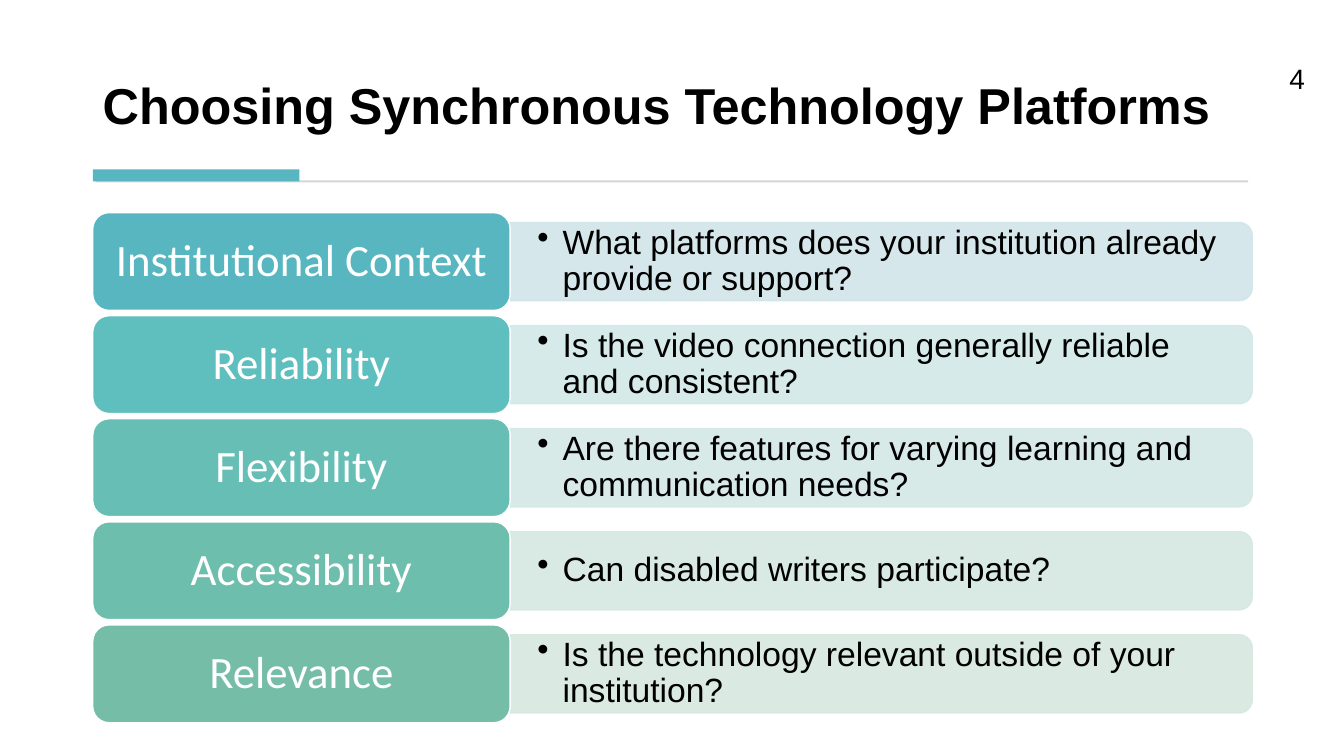
from lxml import etree
from pptx import Presentation, util as u
from pptx.dml.color import RGBColor
from pptx.enum import shapes, text
from pptx.oxml.ns import qn

COLORS = {"ink": "000000", "paper": "FFFFFF", "rule": "D5D5D5", "accent": "58B6C0"}
# Label, question, label colour, panel colour
CRITERIA = [
    ("Institutional Context", "What platforms does your institution already provide or support?",
     "58B6C0", "D1E5E8"),
    ("Reliability", "Is the video connection generally reliable and consistent?",
     "5FBFBF", "D2E8E8"),
    ("Flexibility", "Are there features for varying learning and communication needs?",
     "67BEB5", "D4E8E6"),
    ("Accessibility", "Can disabled writers participate?", "6EBEAD", "D5E8E3"),
    ("Relevance", "Is the technology relevant outside of your institution?",
     "75BDA7", "D6E8E1"),
]


def add_block(s, kind, box, fill, line=None):
    sp = s.shapes.add_shape(kind, *map(u.Inches, box))
    sp.shadow.inherit = False
    sp.fill.solid()
    sp.fill.fore_color.rgb = RGBColor.from_string(fill)
    if line:
        sp.line.color.rgb = RGBColor.from_string(line)
        sp.line.width = u.Pt(1)
    else:
        sp.line.fill.background()
    return sp


def add_box(s, box):
    return s.shapes.add_textbox(*map(u.Inches, box))


def write(sp, words, size, font="Arial", color=COLORS["ink"], bold=False,
          align=text.PP_ALIGN.LEFT, anchor=text.MSO_ANCHOR.MIDDLE,
          inset=(0.1, 0.05), spacing=0.9):
    tf = sp.text_frame
    tf.word_wrap = True
    tf.vertical_anchor = anchor
    tf.margin_left = tf.margin_right = u.Inches(inset[0])
    tf.margin_top = tf.margin_bottom = u.Inches(inset[1])
    p = tf.paragraphs[0]
    p.text = words
    p.alignment = align
    p.line_spacing = spacing
    f = p.runs[0].font
    f.name, f.size, f.bold = font, u.Pt(size), bold
    f.color.rgb = RGBColor.from_string(color)
    return p


def add_bullet(p, indent):
    pPr = p._p.get_or_add_pPr()
    pPr.set("marL", str(u.Inches(indent)))
    pPr.set("indent", str(-u.Inches(indent)))
    etree.SubElement(pPr, qn("a:buChar")).set("char", "•")


def set_opacity(sp, percent):
    for color in sp._element.spPr.iter(qn("a:srgbClr")):
        etree.SubElement(color, qn("a:alpha")).set("val", str(percent * 1000))


def add_header(s, x, y, w, h):
    # Title
    write(add_box(s, (x, y, w, h)), "Choosing Synchronous Technology Platforms", 36,
          bold=True, anchor=text.MSO_ANCHOR.BOTTOM)
    # Thin rule with a thick accent at its left end
    rule_y = y + h + 0.4
    add_block(s, shapes.MSO_SHAPE.RECTANGLE, (x + 0.03, rule_y, w - 0.06, 0.02), COLORS["rule"])
    add_block(s, shapes.MSO_SHAPE.RECTANGLE, (x, rule_y - 0.11, 2.05, 0.12), COLORS["accent"])


def add_criterion(s, x, y, w, h, criterion):
    label, question, label_color, panel_color = criterion
    label_w, panel_h = 0.36 * w, 0.8 * h
    panel_x, panel_w = x + label_w, w - label_w
    mid_x, mid_y = panel_x + panel_w / 2, y + h / 2
    # Panel: a tall shape turned so that its round corners face right
    panel = add_block(s, shapes.MSO_SHAPE.ROUND_2_SAME_RECTANGLE,
                      (mid_x - panel_h / 2, mid_y - panel_w / 2, panel_h, panel_w),
                      panel_color, panel_color)
    panel.rotation = 90
    set_opacity(panel, 90)
    # Question
    p = write(add_box(s, (panel_x, mid_y - 0.35, panel_w - 0.04, 0.7)), question, 24,
              inset=(0.27, 0.14))
    add_bullet(p, 0.25)
    # Label
    sp = add_block(s, shapes.MSO_SHAPE.ROUNDED_RECTANGLE, (x, y, label_w, h),
                   label_color, COLORS["paper"])
    write(sp, label, 32, "Calibri", COLORS["paper"], align=text.PP_ALIGN.CENTER,
          inset=(0.13, 0.07))


def add_criteria(s, x, y, w, h):
    row_h = 0.97
    pitch = (h - row_h) / (len(CRITERIA) - 1)
    for i, criterion in enumerate(CRITERIA):
        add_criterion(s, x, y + i * pitch, w, row_h, criterion)


def add_page_number(s, x, y, w, h):
    write(add_box(s, (x, y, w, h)), "4", 20, align=text.PP_ALIGN.RIGHT, spacing=1.0)


def main():
    prs = Presentation()
    prs.slide_width, prs.slide_height = u.Inches(13.33), u.Inches(7.5)
    s = prs.slides.add_slide(prs.slide_layouts[6])
    add_header(s, 0.92, 0.28, 11.49, 1.11)
    add_criteria(s, 0.92, 2.11, 11.5, 5.06)
    add_page_number(s, 10.04, 0.58, 3, 0.4)
    prs.save("out.pptx")


if __name__ == "__main__":
    main()
